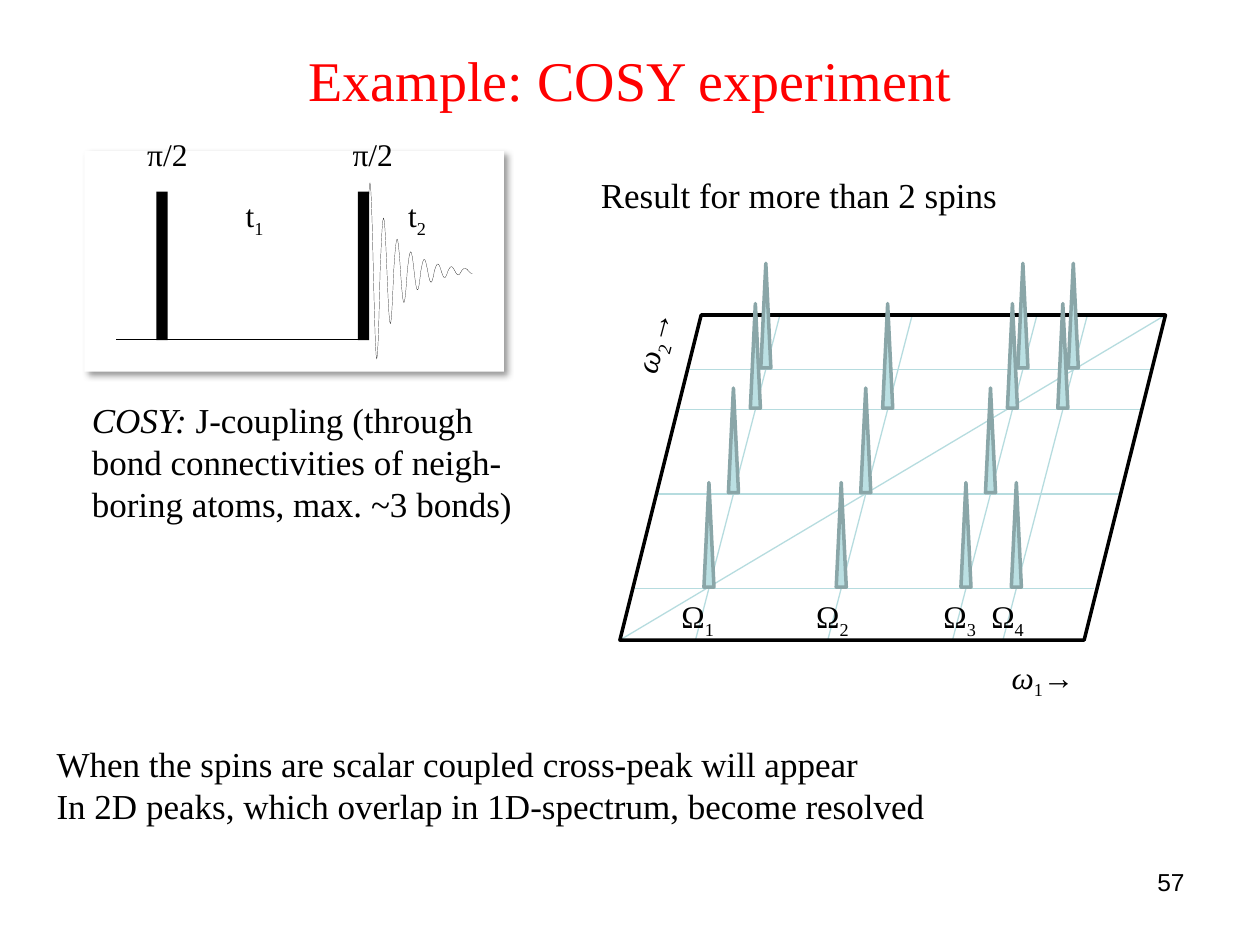
from dataclasses import dataclass
from math import pi, sin

from lxml.etree import SubElement
from pptx import Presentation
from pptx.dml.color import RGBColor
from pptx.enum.shapes import MSO_CONNECTOR, MSO_SHAPE
from pptx.enum.text import MSO_ANCHOR, PP_ALIGN
from pptx.oxml.ns import qn
from pptx.util import Inches, Pt


@dataclass(frozen=True)
class Theme:
    serif: str = "Times New Roman"
    sans: str = "Arial"
    title: RGBColor = RGBColor(0xFF, 0x00, 0x00)
    ink: RGBColor = RGBColor(0x00, 0x00, 0x00)
    paper: RGBColor = RGBColor(0xFF, 0xFF, 0xFF)
    grid: RGBColor = RGBColor(0xB6, 0xDC, 0xDF)
    peak: RGBColor = RGBColor(0xBB, 0xE0, 0xE3)
    peak_edge: RGBColor = RGBColor(0x8A, 0xA6, 0xA8)
    title_size: int = 32
    body_size: int = 20
    label_size: int = 18
    number_size: int = 14
    hairline: float = 0.1


THEME = Theme()
LEFT, TOP, WIDTH, HEIGHT = 4.92, 2.5, 4.33, 2.58
BOTTOM = TOP + HEIGHT
LEAN = 0.67
SPIN_COLUMNS = (5.52, 6.57, 7.56, 7.96)
SPIN_ROWS = (4.67, 3.92, 3.25, 2.93)
UNCOUPLED = {(1, 3), (3, 1)}


def format_run(run, size, color=THEME.ink, font=THEME.serif):
    run.font.size = Pt(size)
    run.font.name = font
    run.font.color.rgb = color


def add_text(slide, box, lines, size, font=THEME.serif, align=PP_ALIGN.LEFT, tabs=(), inset=0.1):
    label = slide.shapes.add_textbox(*map(Inches, box))
    frame = label.text_frame
    frame.word_wrap = True
    frame.margin_left = frame.margin_right = Inches(inset)
    for index, pieces in enumerate(lines):
        paragraph = frame.paragraphs[0] if index == 0 else frame.add_paragraph()
        paragraph.alignment = align
        if tabs:
            tab_list = SubElement(paragraph._p.get_or_add_pPr(), qn("a:tabLst"))
            for position in tabs:
                SubElement(tab_list, qn("a:tab"), pos=str(Inches(position)), algn="l")
        for text, style in pieces:
            run = paragraph.add_run()
            run.text = text
            format_run(run, size, font=font)
            run.font.italic = style == "italic"
            if style == "sub":
                run._r.get_or_add_rPr().set("baseline", "-25000")
    return label


def add_line(slide, start, end, color, width):
    line = slide.shapes.add_connector(MSO_CONNECTOR.STRAIGHT, *map(Inches, (*start, *end)))
    line.line.color.rgb = color
    line.line.width = Pt(width)
    SubElement(line._element.spPr, qn("a:effectLst"))


def paint(shape, fill=None, edge=None, width=THEME.hairline):
    shape.shadow.inherit = False
    if fill is None:
        shape.fill.background()
    else:
        shape.fill.solid()
        shape.fill.fore_color.rgb = fill
    if edge is None:
        shape.line.fill.background()
    else:
        shape.line.color.rgb = edge
        shape.line.width = Pt(width)


def add_figure(slide, kind, box, fill=None, edge=None, width=THEME.hairline):
    figure = slide.shapes.add_shape(kind, *map(Inches, box))
    paint(figure, fill, edge, width)
    return figure


def add_drop_shadow(shape):
    effects = shape._element.spPr.find(qn("a:effectLst"))
    shadow = SubElement(effects, qn("a:outerShdw"), blurRad=str(Pt(4)), dist=str(Pt(3)),
                        dir=str(45 * 60000), algn="tl", rotWithShape="0")
    color = SubElement(shadow, qn("a:srgbClr"), val=str(THEME.ink))
    SubElement(color, qn("a:alpha"), val="40000")


def add_title(slide, text):
    title = slide.shapes.title
    title.left, title.top, title.width, title.height = map(Inches, (0.5, 0, 9, 1.25))
    title.text_frame.text = text
    title.text_frame.vertical_anchor = MSO_ANCHOR.MIDDLE
    paragraph = title.text_frame.paragraphs[0]
    paragraph.alignment = PP_ALIGN.CENTER
    format_run(paragraph.runs[0], THEME.title_size, THEME.title)


def lean_at(y):
    return LEAN * (BOTTOM - y) / HEIGHT


def add_grid(slide):
    add_line(slide, (LEFT + WIDTH, TOP), (LEFT, BOTTOM), THEME.grid, 0.75)
    for x in SPIN_COLUMNS:
        add_line(slide, (x, BOTTOM), (x + LEAN, TOP), THEME.grid, 0.75)
    for y in SPIN_ROWS:
        start = LEFT + lean_at(y)
        add_line(slide, (start, y), (start + WIDTH - LEAN, y), THEME.grid, 0.75)


def add_peaks(slide):
    width, height = 0.08, 0.83
    for row, y in reversed(list(enumerate(SPIN_ROWS))):
        for column, x in enumerate(SPIN_COLUMNS):
            if (column, row) not in UNCOUPLED:
                box = (x + lean_at(y) - width / 2, y - height - 0.01, width, height)
                add_figure(slide, MSO_SHAPE.ISOSCELES_TRIANGLE, box, THEME.peak, THEME.peak_edge, 2)


def add_axis_label(slide, box, number):
    return add_text(slide, box, [[("ω", "italic"), (number, "sub"), ("→", "")]], THEME.label_size)


def add_spectrum(slide):
    add_grid(slide)
    add_figure(slide, MSO_SHAPE.PARALLELOGRAM, (LEFT, TOP, WIDTH, HEIGHT), edge=THEME.ink, width=2)
    add_axis_label(slide, (7.93, 5.17, 0.72, 0.4), "1")
    add_axis_label(slide, (4.82, 2.5, 0.72, 0.4), "2").rotation = 284.8
    add_peaks(slide)
    shifts = [("Ω", ""), ("1", "sub")]
    for number in "234":
        shifts += [("\tΩ", ""), (number, "sub")]
    add_text(slide, (5.31, 4.69, 3.06, 0.4), [shifts], THEME.label_size, tabs=(1.07, 2.08, 2.46))


def add_decay(slide):
    start, axis, length, period, last = 2.91, 2.15, 0.84, 20, 156
    points = []
    for sample in range(last + 1):
        amplitude = 0.7 * 0.6 ** (sample // period)
        x = start + length * sample / last
        y = axis - amplitude * sin(2 * pi * sample / period)
        points.append((Inches(x), Inches(y)))
    builder = slide.shapes.build_freeform(*points[0])
    builder.add_line_segments(points[1:], close=False)
    paint(builder.convert_to_shape(), edge=THEME.ink)


def add_pulse_sequence(slide):
    panel = add_figure(slide, MSO_SHAPE.RECTANGLE, (0.67, 1.2, 3.33, 1.75), THEME.paper)
    add_drop_shadow(panel)
    for x in (1.24, 2.84):
        add_figure(slide, MSO_SHAPE.RECTANGLE, (x, 1.52, 0.09, 1.18), THEME.ink)
    add_decay(slide)
    add_line(slide, (2.91, 2.69), (0.92, 2.69), THEME.ink, THEME.hairline)
    for x, number in ((1.93, "1"), (3.22, "2")):
        add_text(slide, (x, 1.51, 0.43, 0.4), [[("t", ""), (number, "sub")]], THEME.label_size, inset=0.02)
    add_text(slide, (1.07, 1.02, 2.18, 0.4), [[("π/2\tπ/2", "")]], THEME.label_size, tabs=(1.63,))


def main():
    deck = Presentation()
    deck.slide_width, deck.slide_height = Inches(10), Inches(7.5)
    slide = deck.slides.add_slide(deck.slide_layouts[5])
    add_title(slide, "Example: COSY experiment")
    add_text(slide, (0.63, 3.11, 3.95, 1.11), [
        [("COSY:", "italic"), (" J-coupling (through", "")],
        [("bond connectivities of neigh-", "")],
        [("boring atoms, max. ~3 bonds)", "")],
    ], THEME.body_size)
    add_text(slide, (4.67, 1.33, 4.17, 0.44), [[("Result for more than 2 spins", "")]], THEME.body_size)
    add_text(slide, (0.35, 5.84, 9.25, 0.77), [
        [("When the spins are scalar coupled cross-peak will appear", "")],
        [("In 2D peaks, which overlap in 1D-spectrum, become resolved", "")],
    ], THEME.body_size)
    add_spectrum(slide)
    add_text(slide, (7.17, 6.83, 2.33, 0.52), [[("57", "")]], THEME.number_size, THEME.sans, PP_ALIGN.RIGHT)
    add_pulse_sequence(slide)
    deck.save("out.pptx")


if __name__ == "__main__":
    main()
